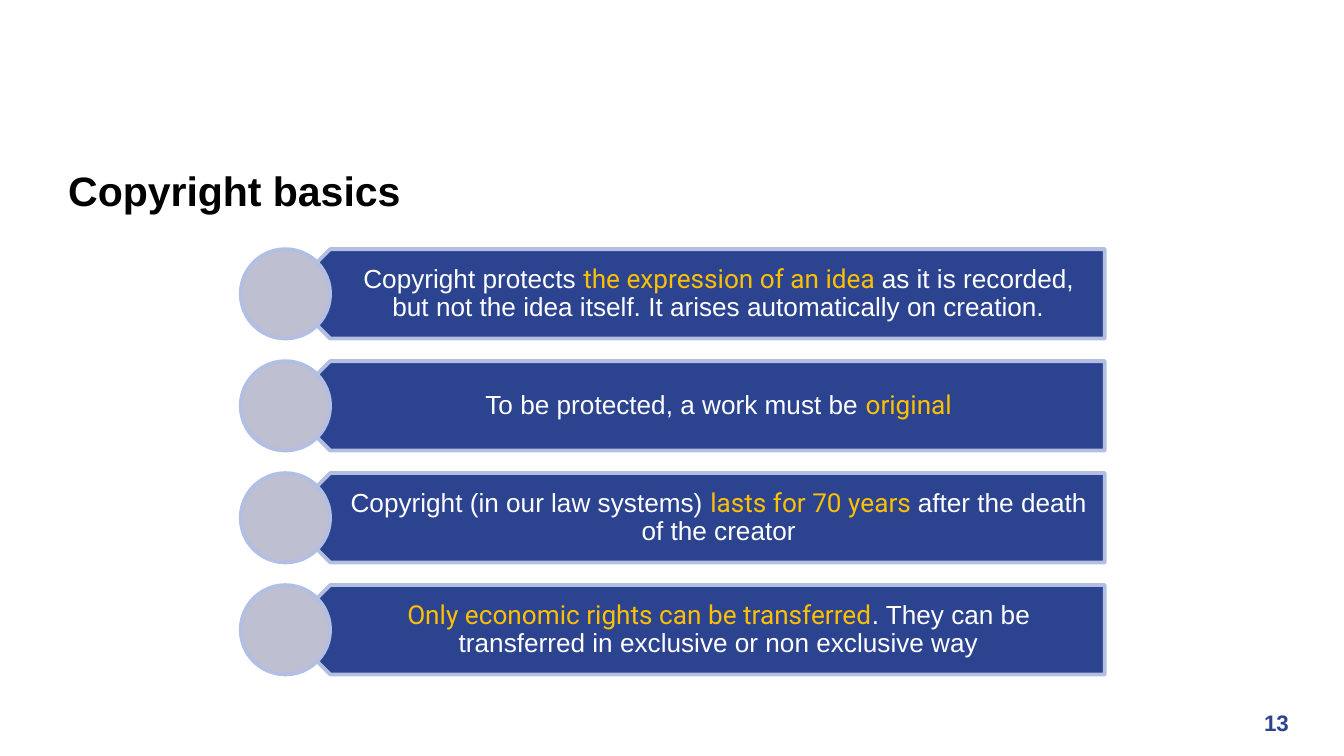
from dataclasses import dataclass

from pptx import Presentation
from pptx.dml.color import RGBColor
from pptx.enum.shapes import MSO_SHAPE
from pptx.enum.text import MSO_ANCHOR, PP_ALIGN
from pptx.util import Cm, Pt

OVAL = MSO_SHAPE.OVAL
TOP, MIDDLE = MSO_ANCHOR.TOP, MSO_ANCHOR.MIDDLE
LEFT, CENTER, RIGHT = PP_ALIGN.LEFT, PP_ALIGN.CENTER, PP_ALIGN.RIGHT


@dataclass(frozen=True)
class Theme:
    font: str = "Arial"
    accent_font: str = "Roboto"
    black: str = "000000"
    white: str = "FFFFFF"
    navy: str = "2C4390"
    gold: str = "FFC000"
    grey: str = "BEC0D1"
    edge: str = "B3BFE2"
    title: int = 22
    body: int = 14
    number: int = 12
    line: int = 2


THEME = Theme()

POINTS = [
    [("Copyright protects ", False),
     ("the expression of an idea ", True),
     ("as it is recorded, but not the idea itself. "
      "It arises automatically on creation.", False)],
    [("To be protected, a work must be ", False),
     ("original", True)],
    [("Copyright (in our law systems) ", False),
     ("lasts for 70 years ", True),
     ("after the death of the creator", False)],
    [("Only economic rights can be transferred", True),
     (". They can be transferred in exclusive or non exclusive way", False)],
]


def add_run(p, text, *, size, color, font=THEME.font, bold=False):
    r = p.add_run()
    r.text = text
    r.font.name = font
    r.font.size = Pt(size)
    r.font.bold = bold
    r.font.color.rgb = RGBColor.from_string(color)


def setup_text(sp, insets, align, anchor):
    tf = sp.text_frame
    tf.word_wrap = True
    tf.vertical_anchor = anchor
    tf.margin_left, tf.margin_top, tf.margin_right, tf.margin_bottom = (
        Cm(v) for v in insets)
    p = tf.paragraphs[0]
    p.alignment = align
    return p


def paint(sp, fill):
    sp.shadow.inherit = False
    sp.fill.solid()
    sp.fill.fore_color.rgb = RGBColor.from_string(fill)
    sp.line.color.rgb = RGBColor.from_string(THEME.edge)
    sp.line.width = Pt(THEME.line)


def add_label(s, box, text, *, insets, align=LEFT, anchor=TOP, **fmt):
    sp = s.shapes.add_textbox(*box)
    add_run(setup_text(sp, insets, align, anchor), text, bold=True, **fmt)


def add_point(s, box, parts):
    x, y, w, h = box
    tip, shoulder, right = x + h // 2, x + h, x + w
    builder = s.shapes.build_freeform(right, y + h)
    builder.add_line_segments(
        [(shoulder, y + h), (tip, y + h // 2), (shoulder, y), (right, y)])
    bar = builder.convert_to_shape()
    paint(bar, THEME.navy)
    p = setup_text(bar, (1.17, 0.15, 0.28, 0.15), CENTER, MIDDLE)
    p.line_spacing = 0.9
    for text, accent in parts:
        add_run(p, text, size=THEME.body,
                color=THEME.gold if accent else THEME.white,
                font=THEME.accent_font if accent else THEME.font)
    paint(s.shapes.add_shape(OVAL, x, y, h, h), THEME.grey)


def add_point_list(s, box, points):
    x, y, w, h = box
    row_h = Cm(1.69)
    pitch = (h - row_h) // (len(points) - 1)
    for i, parts in enumerate(points):
        add_point(s, (x, y + i * pitch, w, row_h), parts)


def main():
    prs = Presentation()
    prs.slide_width, prs.slide_height = Cm(25.4), Cm(14.29)
    s = prs.slides.add_slide(prs.slide_layouts[6])
    add_label(s, (Cm(1.04), Cm(3), Cm(23.32), Cm(1.73)), "Copyright basics",
              insets=(0.25, 0.13, 0.25, 0.13),
              size=THEME.title, color=THEME.black)
    add_point_list(s, (Cm(4.55), Cm(4.71), Cm(16.33), Cm(8.04)), POINTS)
    add_label(s, (Cm(22.96), Cm(13.28), Cm(1.4), Cm(0.76)), "13",
              insets=(0.25, 0.13, 0, 0.13), align=RIGHT, anchor=MIDDLE,
              size=THEME.number, color=THEME.navy)
    prs.save("out.pptx")


if __name__ == "__main__":
    main()
